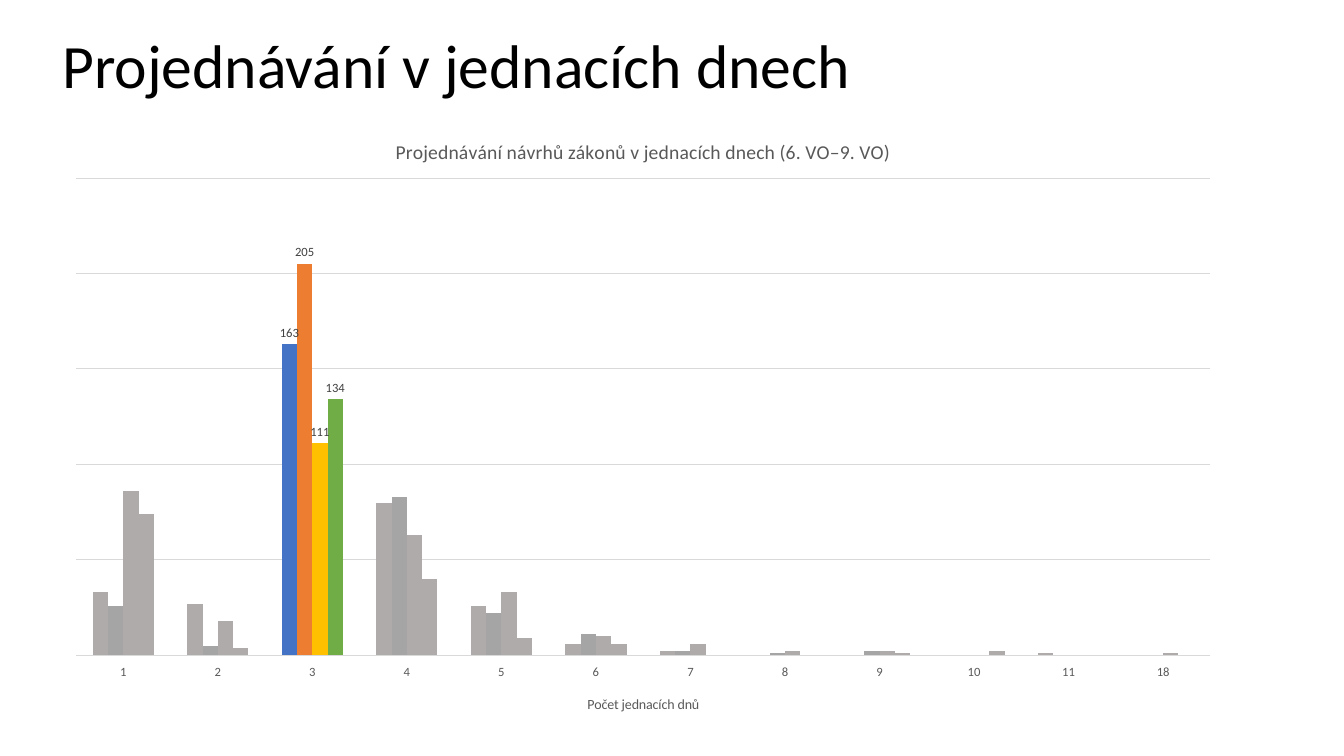
from dataclasses import dataclass

from lxml.etree import SubElement
from pptx import Presentation
from pptx.chart.data import CategoryChartData
from pptx.dml.color import RGBColor
from pptx.enum.chart import XL_CHART_TYPE, XL_LABEL_POSITION, XL_TICK_LABEL_POSITION, XL_TICK_MARK
from pptx.enum.text import MSO_ANCHOR
from pptx.oxml.ns import qn
from pptx.util import Inches, Pt


@dataclass(frozen=True)
class Theme:
    font: str = "Calibri"
    black: str = "000000"
    text: str = "595959"
    label: str = "404040"
    grid: str = "D9D9D9"
    head: int = 44
    title: int = 14
    axis: int = 10
    small: int = 9


THEME = Theme()
DAYS = ["1", "2", "3", "4", "5", "6", "7", "8", "9", "10", "11", "18"]
PEAK = DAYS.index("3")
# Name, values, base colour, colour of the peak day
SERIES = [
    ("Series 1", [33, 27, 163, 80, 26, 6, 2, None, None, None, 1, None], "AFABAB", "4472C4"),
    ("Series 2", [26, 5, 205, 83, 22, 11, 2, 1, 2, None, None, None], "A5A5A5", "ED7D31"),
    ("Series 3", [86, 18, 111, 63, 33, 10, 6, 2, 2, None, None, 1], "AFABAB", "FFC000"),
    ("Series 4", [74, 4, 134, 40, 9, 6, None, None, 1, 2, None, None], "AFABAB", "70AD47"),
]


def style(font, size, color):
    font.name = THEME.font
    font.size = Pt(size)
    font.bold = False
    font.color.rgb = RGBColor.from_string(color)


def paint(format, color):
    format.fill.solid()
    format.fill.fore_color.rgb = RGBColor.from_string(color)


def rule(line):
    line.color.rgb = RGBColor.from_string(THEME.grid)
    line.width = Pt(0.75)


def caption(owner, text, size):
    frame = (owner.chart_title if hasattr(owner, "chart_title") else owner.axis_title).text_frame
    frame.text = text
    style(frame.paragraphs[0].runs[0].font, size, THEME.text)


def add_head(slide, text):
    box = slide.shapes.add_textbox(Inches(0.52), Inches(0.27), Inches(11.5), Inches(0.81))
    frame = box.text_frame
    frame.word_wrap = True
    frame.vertical_anchor = MSO_ANCHOR.MIDDLE
    frame.text = text
    frame.paragraphs[0].line_spacing = 0.9
    style(frame.paragraphs[0].runs[0].font, THEME.head, THEME.black)


def place_plot(chart, **place):
    """Fix the inner plot area as fractions of the chart."""
    area = chart._chartSpace.chart.plotArea
    for old in area.findall(qn("c:layout")):
        area.remove(old)
    layout = SubElement(area, qn("c:layout"))
    area.insert(0, layout)
    manual = SubElement(layout, qn("c:manualLayout"))
    parts = {"layoutTarget": "inner", "xMode": "edge", "yMode": "edge", **place}
    for tag, value in parts.items():
        SubElement(manual, qn(f"c:{tag}")).set("val", str(value))


def style_axes(chart):
    days = chart.category_axis
    days.major_tick_mark = XL_TICK_MARK.NONE
    days.tick_label_position = XL_TICK_LABEL_POSITION.LOW
    style(days.tick_labels.font, THEME.small, THEME.text)
    rule(days.format.line)
    caption(days, "Počet jednacích dnů", THEME.axis)

    count = chart.value_axis
    count.visible = False
    count.minimum_scale, count.maximum_scale, count.major_unit = 0, 250, 50
    count.has_major_gridlines = True
    rule(count.major_gridlines.format.line)


def style_bars(series, base, accent):
    paint(series.format, base)
    series.invert_if_negative = False
    series.data_labels.show_value = False
    peak = series.points[PEAK]
    paint(peak.format, accent)
    style(peak.data_label.font, THEME.small, THEME.label)
    peak.data_label.position = XL_LABEL_POSITION.OUTSIDE_END


def add_bars(slide):
    data = CategoryChartData()
    data.categories = DAYS
    for name, values, *_ in SERIES:
        data.add_series(name, values)
    chart = slide.shapes.add_chart(
        XL_CHART_TYPE.COLUMN_CLUSTERED,
        Inches(0.52), Inches(1.16), Inches(11.72), Inches(6.07), data,
    ).chart
    style(chart.font, THEME.axis, THEME.black)
    chart.has_legend = False
    caption(chart, "Projednávání návrhů zákonů v jednacích dnech (6. VO–9. VO)", THEME.title)
    plot = chart.plots[0]
    plot.gap_width, plot.overlap, plot.vary_by_categories = 219, 0, False
    style_axes(chart)
    for series, (_, _, base, accent) in zip(plot.series, SERIES):
        style_bars(series, base, accent)
    place_plot(chart, x=0.02, y=0.1, w=0.96, h=0.78)


def main():
    deck = Presentation()
    deck.slide_width, deck.slide_height = Inches(13.33), Inches(7.5)
    slide = deck.slides.add_slide(deck.slide_layouts[6])
    add_head(slide, "Projednávání v jednacích dnech")
    add_bars(slide)
    deck.save("out.pptx")


if __name__ == "__main__":
    main()
